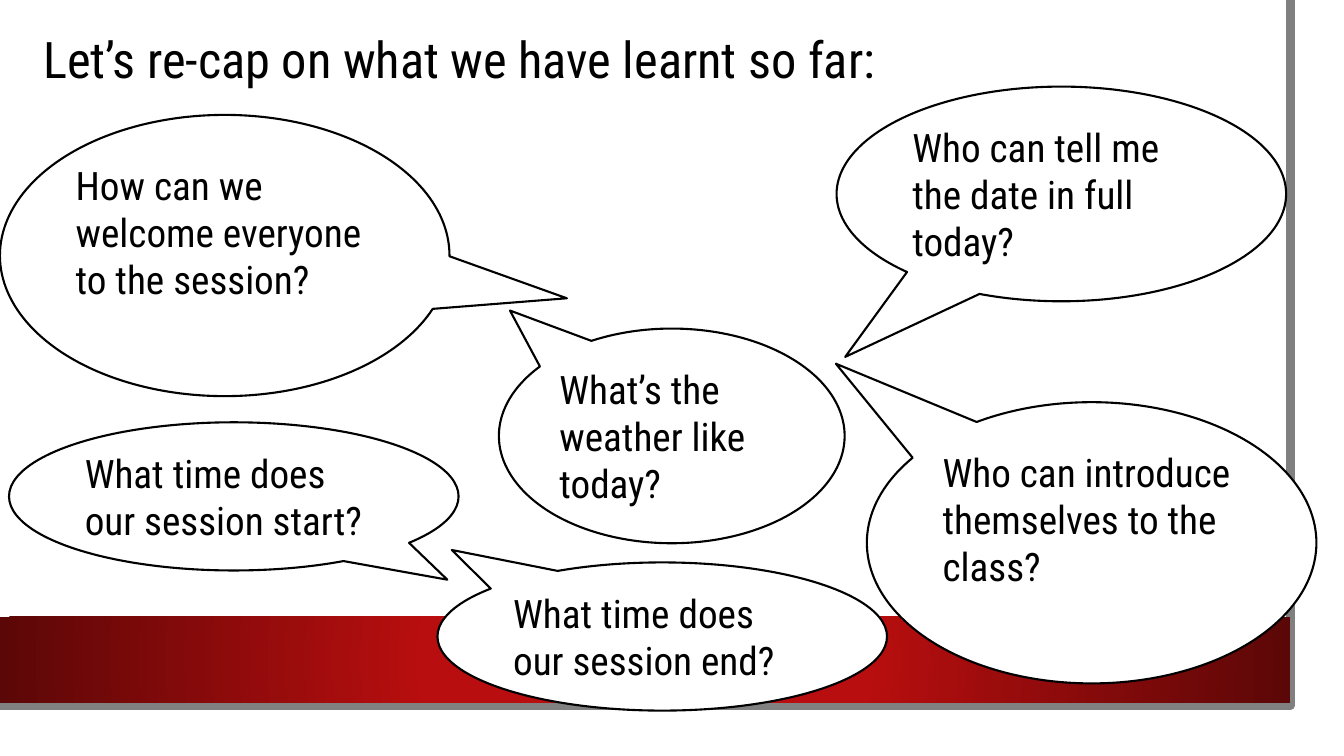
import pptx
import pptx.util
import pptx.dml.color
import pptx.enum.shapes
import pptx.enum.text
import pptx.oxml
import pptx.oxml.ns

RGBColor = pptx.dml.color.RGBColor
MSO_SHAPE = pptx.enum.shapes.MSO_SHAPE
WHITE = RGBColor(0xFF, 0xFF, 0xFF)
BLACK = RGBColor(0, 0, 0)
GREY = RGBColor(0x80, 0x80, 0x80)
RED = RGBColor(0xB8, 0x0E, 0x0F)
DARK_RED = RGBColor(0x5C, 0x07, 0x07)

# Grid: square cells, 133.33 columns by 75 rows
CELL = pptx.util.Inches(0.1)
COLS, ROWS = 133.33, 75
CALLOUT_W = 44.6


def cells(*values):
    return [round(v * CELL) for v in values]


def write(sp, text, size):
    tf = sp.text_frame
    frame_format = {
        "word_wrap": True,
        "auto_size": pptx.enum.text.MSO_AUTO_SIZE.NONE,
        "vertical_anchor": pptx.enum.text.MSO_ANCHOR.TOP,
    }
    for name, value in frame_format.items():
        setattr(tf, name, value)
    p = tf.paragraphs[0]
    p.alignment = pptx.enum.text.PP_ALIGN.LEFT
    r = p.add_run()
    r.text = text
    for name, value in {"name": "Roboto Condensed", "size": pptx.util.Pt(size)}.items():
        setattr(r.font, name, value)
    r.font.color.rgb = BLACK


prs = pptx.Presentation()
prs.slide_width, prs.slide_height = cells(COLS, ROWS)
s = prs.slides.add_slide(prs.slide_layouts[6])

# White page and red band
page = s.shapes.add_shape(MSO_SHAPE.RECTANGLE, *cells(0, 0, 131, 72.7))
page.fill.solid()
page.fill.fore_color.rgb = WHITE

# Grey edge along the right and the bottom
fb = s.shapes.build_freeform(128.2, 0, scale=CELL)
fb.add_line_segments([(128.5, 70.2), (-0.3, 70.1)], close=False)
edge = fb.convert_to_shape()
edge.fill.background()
edge.line.color.rgb = GREY
edge.line.width = pptx.util.Pt(6.5)

band = s.shapes.add_shape(MSO_SHAPE.RECTANGLE, *cells(0, 61.2, 128, 8.5))
grad = pptx.oxml.parse_xml(
    f'<a:gradFill {pptx.oxml.ns.nsdecls("a")} rotWithShape="1"><a:gsLst>'
    f'<a:gs pos="34000"><a:srgbClr val="{RED}"/></a:gs>'
    f'<a:gs pos="100000"><a:srgbClr val="{DARK_RED}"/></a:gs></a:gsLst>'
    '<a:path path="circle"><a:fillToRect l="50000" t="50000" r="50000" b="50000"/>'
    '</a:path></a:gradFill>')
band.fill.background()
no_fill = band.fill._xPr.find(pptx.oxml.ns.qn("a:noFill"))
no_fill.getparent().replace(no_fill, grad)

for sp in (page, band):
    sp.line.fill.background()
for sp in (page, edge, band):
    sp.shadow.inherit = False

# Title
title = s.shapes.add_textbox(*cells(3.3, 2.3, 106.2, 7.1))
write(title, "Let’s re-cap on what we have learnt so far:", 36)

# Speech bubbles: text, left, top, width, height, tip of the tail
callouts = [
    ("Who can tell me the date in full today?", 83, 8.6, CALLOUT_W, 21.3, (-0.481, 0.759)),
    ("Who can introduce themselves to the class?", 86, 39.9, CALLOUT_W, 27.9, (-0.569, -0.637)),
    ("How can we welcome everyone to the session?", 0, 11.4, CALLOUT_W, 27.9, (0.761, 0.152)),
    ("What time does our session start?", 0.9, 41.9, CALLOUT_W, 14.7, (0.475, 0.562)),
    ("What time does our session end?", 43.4, 55.8, CALLOUT_W, 14.7, (-0.468, -0.584)),
    ("What’s the weather like today?", 49.5, 32.6, 34.3, 21.3, (-0.468, -0.584)),
]
for text, left, top, width, height, tip in callouts:
    sp = s.shapes.add_shape(MSO_SHAPE.OVAL_CALLOUT, *cells(left, top, width, height))
    sp.adjustments[0], sp.adjustments[1] = tip
    sp.shadow.inherit = False
    sp.fill.solid()
    sp.fill.fore_color.rgb = WHITE
    sp.line.color.rgb = BLACK
    sp.line.width = pptx.util.Pt(1.5)
    write(sp, text, 28)

prs.save("out.pptx")
